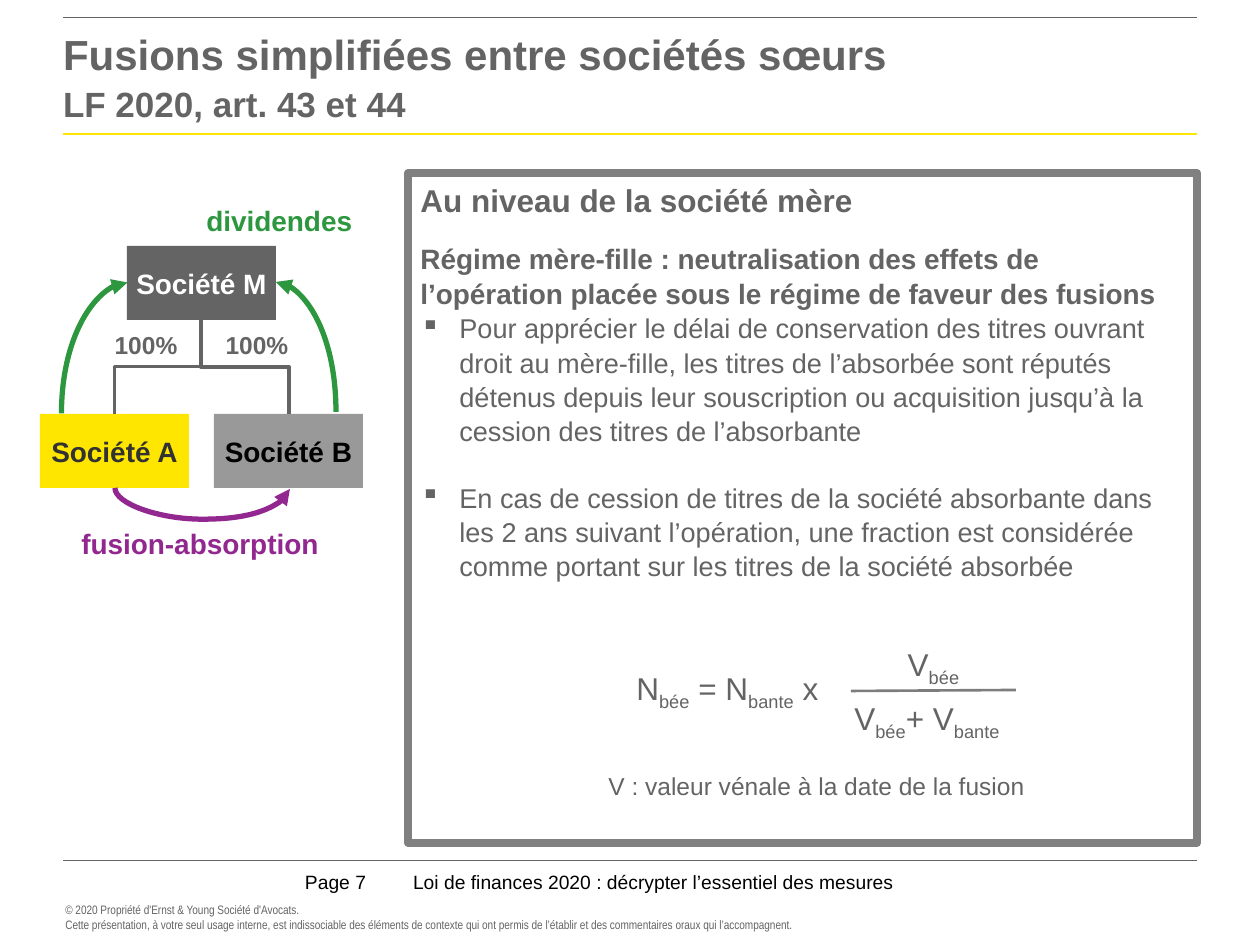
from lxml import etree
from pptx import Presentation
from pptx import util as u
from pptx.dml.color import RGBColor
from pptx.enum import shapes, text
from pptx.oxml.ns import qn

PX = 914400 / 126
HUES = {
    "grey": "646464", "frame": "808080", "rule": "7D7D7D", "mid": "999999",
    "dark": "323232", "black": "000000", "white": "FFFFFF",
    "gold": "FFE600", "green": "2C973E", "plum": "91278F",
}
LEFT, MID = text.PP_ALIGN.LEFT, text.PP_ALIGN.CENTER
KIND = shapes.MSO_CONNECTOR

deck = Presentation()
deck.slide_width, deck.slide_height = u.Inches(10), u.Inches(7.5)
slide = deck.slides.add_slide(deck.slide_layouts[5])
tree = slide.shapes


def write(para, words, size, hue, bold=False, align=LEFT, face="Arial"):
    first, *rest = words.split("|")
    para.text = first
    para.alignment = align
    for part in rest:
        para.add_run().text = part
    for gap in para._p.findall(qn("a:br")):
        etree.SubElement(gap, qn("a:rPr")).set("sz", str(size * 100))
    for i, run in enumerate(para.runs):
        run.font.size, run.font.name, run.font.bold = u.Pt(size), face, bold
        run.font.color.rgb = RGBColor.from_string(HUES[hue])
        if rest and i % 2:
            run._r.get_or_add_rPr().set("baseline", "-25000")


def link(kind, x, y, w, h, hue, width, turn=0, flip="", form=None, bend=None, tip=False):
    line = tree.add_connector(kind, *[round(v * PX) for v in (x, y, x + w, y + h)])
    line.line.color.rgb = RGBColor.from_string(HUES[hue])
    line.line.width = u.Pt(width)
    spot = line._element.spPr
    frame, geom = spot.find(qn("a:xfrm")), spot.find(qn("a:prstGeom"))
    if turn:
        frame.set("rot", str(turn * 60000))
    for axis in flip:
        frame.set("flip" + axis.upper(), "1")
    if form:
        geom.set("prst", form)
    if bend:
        guide = etree.SubElement(geom.find(qn("a:avLst")), qn("a:gd"))
        guide.set("name", "adj1")
        guide.set("fmla", f"val {bend}")
    if tip:
        etree.SubElement(line.line._get_or_add_ln(), qn("a:tailEnd")).set("type", "triangle")
    etree.SubElement(spot, qn("a:effectLst"))


for y, hue, width in [(134, "gold", 1), (860, "grey", 0.25), (17, "grey", 0.5)]:
    link(KIND.STRAIGHT, 63, y, 1134, 0, hue, width)

title = tree.title
title.left, title.top, title.width, title.height = [round(v * PX) for v in (63, 18, 1134, 118)]
frame = title.text_frame
frame.auto_size = text.MSO_AUTO_SIZE.NONE
frame.word_wrap = True
frame.vertical_anchor = text.MSO_ANCHOR.TOP
frame.margin_left = frame.margin_right = frame.margin_bottom = 0
frame.margin_top = round(5 * PX)
head = frame.paragraphs[0]
write(head, "Fusions simplifiées entre sociétés sœurs\vLF 2020, art. 43 et 44", 24, "grey", True)
head.line_spacing = 1.1
head.runs[1].font.size = u.Pt(20)

panel = tree.add_shape(shapes.MSO_SHAPE.RECTANGLE, *[round(v * PX) for v in (408, 173, 789, 670)])
panel.shadow.inherit = False
panel.fill.solid()
panel.fill.fore_color.rgb = RGBColor.from_string(HUES["white"])
panel.line.color.rgb = RGBColor.from_string(HUES["frame"])
panel.line.width = u.Pt(4.5)
frame = panel.text_frame
frame.word_wrap = True
frame.vertical_anchor = text.MSO_ANCHOR.TOP
points = [
    ("Au niveau de la société mère", 18, 0, False),
    ("Régime mère-fille : neutralisation des effets de l’opération placée sous le régime de faveur des fusions", 16, 12, False),
    ("Pour apprécier le délai de conservation des titres ouvrant droit au mère-fille, les titres de l’absorbée sont réputés détenus depuis leur souscription ou acquisition jusqu’à la cession des titres de l’absorbante", 15.5, 0, True),
    ("En cas de cession de titres de la société absorbante dans les 2 ans suivant l’opération, une fraction est considérée comme portant sur les titres de la société absorbée", 15.5, 18.6, True),
]
for i, (words, size, gap, dot) in enumerate(points):
    para = frame.add_paragraph() if i else frame.paragraphs[0]
    write(para, words, size, "grey", not dot)
    para.line_spacing = 1.05
    para.space_before = u.Pt(gap)
    if dot:
        props = para._p.get_or_add_pPr()
        props.set("marL", str(round(39 * PX)))
        props.set("indent", str(round(-39 * PX)))
        etree.SubElement(props, qn("a:buChar")).set("char", "▪")

link(KIND.STRAIGHT, 851, 691, 165, -1, "rule", 1.5)
link(KIND.CURVE, 29, 315, 131, 66, "green", 3, 90, "hv", "curvedConnector2", tip=True)
link(KIND.CURVE, 241, 317, 130, 60, "green", 3, 270, "v", "curvedConnector2", tip=True)

for words, x, y, fill, hue in [
    ("Société A", 40, 414, "gold", "dark"),
    ("Société B", 214, 414, "mid", "black"),
    ("Société M", 127, 246, "grey", "white"),
]:
    firm = tree.add_shape(shapes.MSO_SHAPE.RECTANGLE, *[round(v * PX) for v in (x, y, 149, 74)])
    firm.shadow.inherit = False
    firm.fill.solid()
    firm.fill.fore_color.rgb = RGBColor.from_string(HUES[fill])
    firm.line.fill.background()
    frame = firm.text_frame
    frame.word_wrap = True
    frame.vertical_anchor = text.MSO_ANCHOR.MIDDLE
    frame.margin_left = frame.margin_right = round(5 * PX)
    frame.margin_top = frame.margin_bottom = 0
    write(frame.paragraphs[0], words, 16, hue, True, MID)

link(KIND.ELBOW, 111, 323, 94, 87, "grey", 2.25, 90)
link(KIND.ELBOW, 198, 323, 94, 88, "grey", 2.25, 270, "h")
link(KIND.CURVE, 202, 401, 1, 175, "plum", 3, 270, "h", bend=3150000, tip=True)

notes = [
    ("N|bée| = N|bante| x", 624, 663, 368, 50, 18, "grey", False, LEFT),
    ("V|bée", 851, 639, 165, 50, 18, "grey", False, MID),
    ("V|bée|+ V|bante", 832, 693, 190, 50, 18, "grey", False, MID),
    ("V : valeur vénale à la date de la fusion", 596, 765, 464, 43, 14, "grey", False, LEFT),
    ("dividendes", 194, 197, 176, 47, 16, "green", True, LEFT),
    ("100%", 203, 324, 108, 43, 14, "grey", True, MID),
    ("100%", 92, 324, 108, 43, 14, "grey", True, MID),
    ("fusion-absorption", 55, 520, 290, 47, 16, "plum", True, MID),
    ("© 2020 Propriété d'Ernst & Young Société d'Avocats.\vCette présentation, à votre seul usage interne, est indissociable des éléments de contexte qui ont permis de l’établir et des commentaires oraux qui l’accompagnent.",
     53, 896, 945, 43, 7, "grey", False, LEFT, "Arial Narrow"),
    ("Loi de finances 2020 : décrypter l’essentiel des mesures", 413, 870, 585, 28, 11, "black", False, LEFT),
    ("Page 7", 305, 870, 92, 28, 11, "black", False, LEFT),
]
for words, x, y, w, h, *style in notes:
    box = tree.add_textbox(*[round(v * PX) for v in (x, y, w, h)])
    frame = box.text_frame
    frame.word_wrap = True
    if h == 28:
        frame.margin_left = frame.margin_right = frame.margin_top = frame.margin_bottom = 0
    write(frame.paragraphs[0], words, *style)

deck.save("out.pptx")
